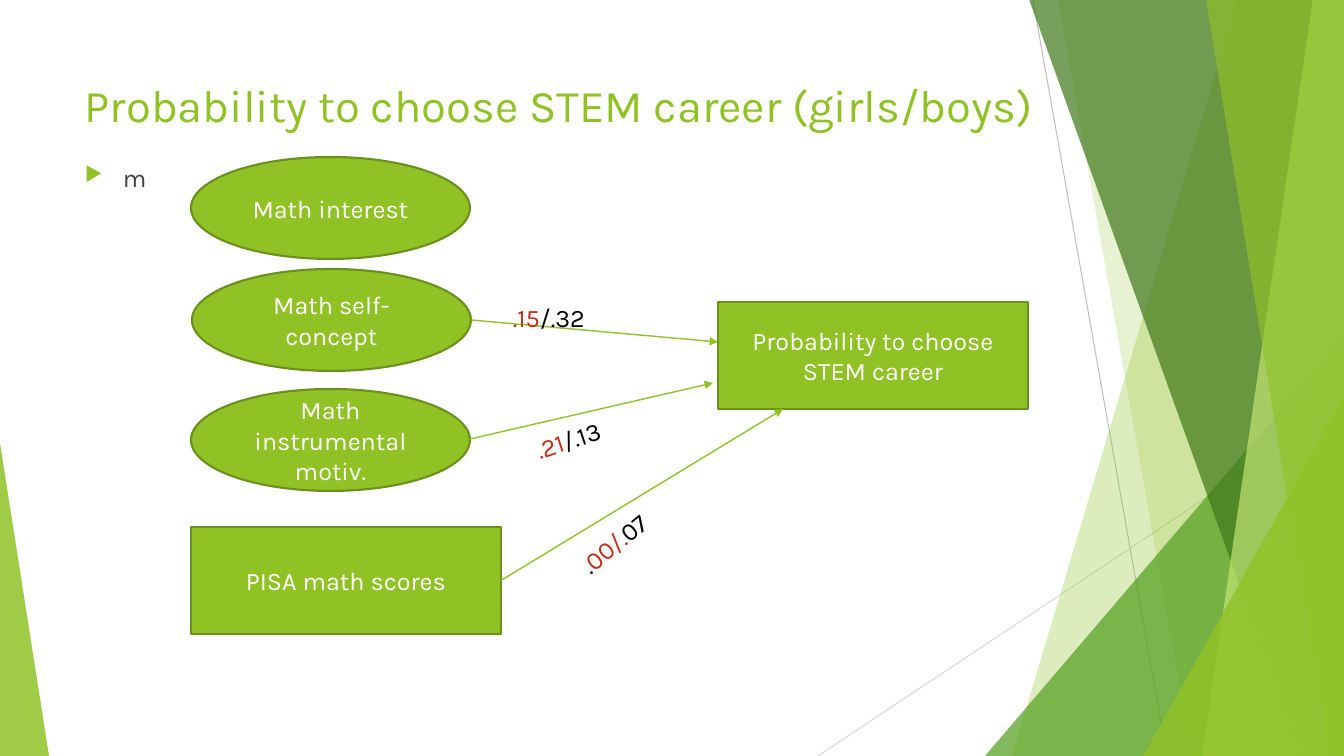
from dataclasses import dataclass

from pptx import Presentation
from pptx.dml.color import RGBColor
from pptx.enum.shapes import MSO_CONNECTOR, MSO_SHAPE
from pptx.enum.text import MSO_ANCHOR, PP_ALIGN
from pptx.oxml.ns import qn
from pptx.oxml.xmlchemy import OxmlElement
from pptx.util import Emu, Pt

PX = 914400 / 100.8
W, H = 1344, 756


@dataclass(frozen=True)
class Theme:
    """Colours, font and type sizes of the slide."""
    font: str = "Karla"
    title: float = 32.4
    text: float = 18
    lime: str = "90C226"
    edge: str = "6B901C"
    leaf: str = "54A021"
    forest: str = "3F7819"
    pale: str = "C0E474"
    grey: str = "BFBFBF"
    mist: str = "D9D9D9"
    ink: str = "404040"
    white: str = "FFFFFF"
    girls: str = "C42F1A"
    boys: str = "000000"


def px(*values):
    """Turn px lengths into EMU."""
    return [Emu(round(v * PX)) for v in values]


def child(parent, tag, **attrs):
    """Append an XML element with the given attributes."""
    el = OxmlElement(tag)
    for name, value in attrs.items():
        el.set(name, str(value))
    parent.append(el)
    return el


def write(tf, text, *, color, size, font, align=PP_ALIGN.LEFT, anchor=MSO_ANCHOR.TOP):
    """Write text, or (text, colour) runs, into the first paragraph of a frame."""
    tf.word_wrap = True
    tf.vertical_anchor = anchor
    p = tf.paragraphs[0]
    p.alignment = align
    for words, tint in [(text, color)] if isinstance(text, str) else text:
        r = p.add_run()
        r.text = words
        r.font.name = font
        r.font.size = Pt(size)
        r.font.color.rgb = RGBColor.from_string(tint)
    return p


class Deck:
    """Draws elements on the current slide in one theme."""

    def __init__(self, prs, theme):
        """Add a blank slide to draw on."""
        self.theme = theme
        self.shapes = prs.slides.add_slide(prs.slide_layouts[6]).shapes

    def paint(self, s, color, alpha=100):
        """Fill a shape flatly with an opacity in percent."""
        s.shadow.inherit = False
        s.fill.solid()
        s.fill.fore_color.rgb = RGBColor.from_string(color)
        if alpha < 100:
            clr = s._element.spPr.find(qn("a:solidFill"))[0]
            child(clr, "a:alpha", val=alpha * 1000)

    def pane(self, top, bottom, color, alpha):
        """Draw a pane slanting from top x to bottom x up to the right slide edge."""
        fb = self.shapes.build_freeform(top, -1, scale=PX)
        fb.add_line_segments([(W, -1), (W, H), (bottom, H)], close=True)
        s = fb.convert_to_shape()
        self.paint(s, color, alpha)
        s.line.fill.background()

    def triangle(self, x, y, w, apex, color, alpha):
        """Draw a triangle standing on the bottom slide edge."""
        s = self.shapes.add_shape(MSO_SHAPE.ISOSCELES_TRIANGLE, *px(x, y, w, H - y))
        s.adjustments[0] = apex
        self.paint(s, color, alpha)
        s.line.fill.background()

    def line(self, x1, y1, x2, y2, color, width=0.75, arrow=False, start=None):
        """Draw a straight line, optionally with an arrowhead and a joined start."""
        s = self.shapes.add_connector(MSO_CONNECTOR.STRAIGHT, *px(x1, y1, x2, y2))
        if start is not None:
            s.begin_connect(start, 3)
        s.line.color.rgb = RGBColor.from_string(color)
        s.line.width = Pt(width)
        if arrow:
            child(s.line._get_or_add_ln(), "a:tailEnd", type="triangle")
        child(s._element.spPr, "a:effectLst")

    def node(self, kind, x, y, w, h, text):
        """Draw a labelled model variable."""
        t = self.theme
        s = self.shapes.add_shape(kind, *px(x, y, w, h))
        self.paint(s, t.lime)
        s.line.color.rgb = RGBColor.from_string(t.edge)
        s.line.width = Pt(1.5)
        write(s.text_frame, text, color=t.white, size=t.text, font=t.font,
              align=PP_ALIGN.CENTER, anchor=MSO_ANCHOR.MIDDLE)
        return s

    def text(self, x, y, w, h, text, color=None, size=None, rotation=0,
             anchor=MSO_ANCHOR.TOP):
        """Add a text box and return its paragraph."""
        t = self.theme
        s = self.shapes.add_textbox(*px(x, y, w, h))
        s.rotation = rotation
        return write(s.text_frame, text, color=color or t.ink, size=size or t.text,
                     font=t.font, anchor=anchor)

    def bullet(self, x, y, w, h, text):
        """Add a text box with one arrow bullet."""
        p = self.text(x, y, w, h, text)
        p.space_before = Pt(10)
        indent = px(38)[0]
        pPr = p._p.get_or_add_pPr()
        pPr.set("marL", str(indent))
        pPr.set("indent", str(-indent))
        child(child(pPr, "a:buClr"), "a:srgbClr", val=self.theme.lime)
        child(pPr, "a:buSzPct", val=80000)
        child(pPr, "a:buChar", char="▶")


def main():
    """Build and save the slide."""
    t = Theme()
    prs = Presentation()
    prs.slide_width, prs.slide_height = px(W, H)
    d = Deck(prs, t)

    d.line(1033, 0, 1167, H, t.grey)
    d.line(W, 406, 818, H, t.mist)
    d.pane(1238, 1012, t.lime, 30)
    d.pane(1058, 1192, t.lime, 20)
    d.triangle(985, 336, 359, 1, t.leaf, 72)
    d.pane(1029, 1301, t.forest, 70)
    d.pane(1313, 1202, t.pale, 70)
    d.pane(1206, 1329, t.lime, 65)
    d.triangle(1143, 396, 201, 1, t.lime, 80)
    d.triangle(0, 443, 49, 0, t.lime, 85)

    d.text(75, 68, 976, 73, "Probability to choose STEM career (girls/boys)",
           color=t.lime, size=t.title, anchor=MSO_ANCHOR.MIDDLE)
    d.bullet(75, 157, 948, 509, "m")

    for x, y, text in [(191, 157, "Math interest"), (192, 269, "Math self-concept"),
                       (191, 389, "Math instrumental motiv.")]:
        d.node(MSO_SHAPE.OVAL, x, y, 279, 102, text)
    d.node(MSO_SHAPE.RECTANGLE, 718, 302, 310, 107, "Probability to choose STEM career")
    pisa = d.node(MSO_SHAPE.RECTANGLE, 191, 527, 310, 107, "PISA math scores")

    for ends, start in [((471, 320, 718, 342), None), ((470, 439, 713, 383), None),
                        ((501, 580, 783, 409), pisa)]:
        d.line(*ends, t.lime, width=1, arrow=True, start=start)

    d.text(503, 297, 183, 40, [(".15", t.girls), ("/.32", t.boys)])
    d.text(524, 411, 142, 40, [(".21", t.girls), ("/.13", t.boys)], rotation=341.9)
    d.text(561, 510, 138, 40, [(".", t.boys), ("00/.", t.girls), ("07", t.boys)],
           rotation=320.7)

    prs.save("out.pptx")


if __name__ == "__main__":
    main()
